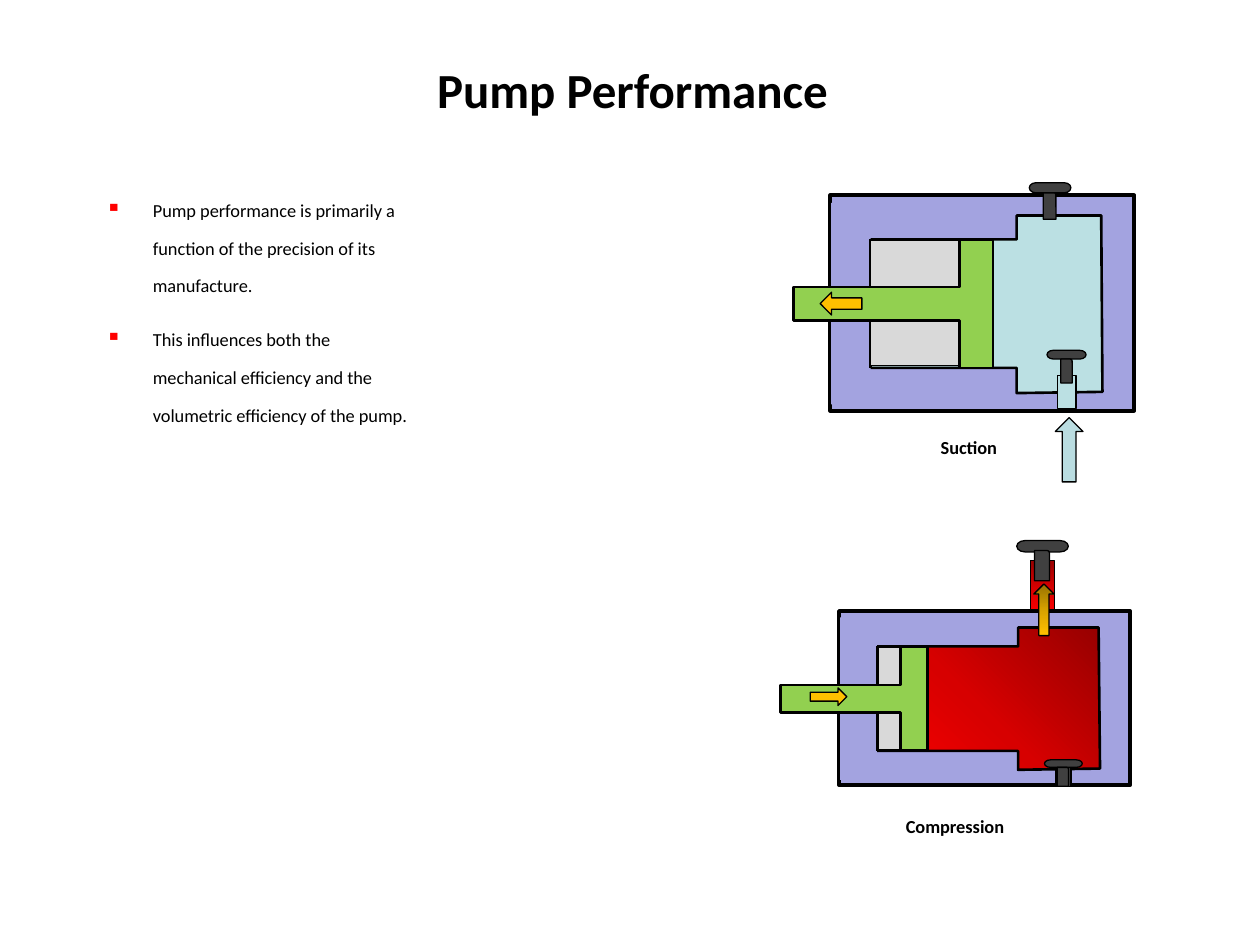
import pptx
import pptx.util
import pptx.dml.color
import pptx.enum.shapes
import pptx.enum.text
import pptx.oxml
import pptx.oxml.ns
import lxml.etree
from dataclasses import dataclass

Pt = pptx.util.Pt
SHAPES = pptx.enum.shapes.MSO_SHAPE
TEXT = pptx.enum.text


@dataclass(frozen=True)
class Theme:
    font: str = "Calibri"
    title_size: float = 28
    body_size: float = 10.5
    body_pitch: float = 21.5
    body_gap: float = 9.4
    ink: str = "000000"
    bullet: str = "FF0000"
    housing: str = "A3A3E0"
    fluid: str = "BBE0E3"
    inflow: str = "BADDE1"
    space: str = "D9D9D9"
    piston: str = "92D050"
    valve: str = "404040"
    motion: str = "FFC000"
    pressure: tuple = ("970000", "D70000", "FF0000")
    outflow: tuple = ("977200", "D7A200", "FFC000")
    thin: float = 0.75
    medium: float = 1.5
    thick: float = 2.25


THEME = Theme()

TITLE = ("Pump Performance", (37.4, 15.1, 648, 72))
BODY_BOX = (53.3, 105, 190.1, 257.8)
BODY = [
    "Pump performance is primarily a function of the precision of its manufacture.",
    "This influences both the mechanical efficiency and the volumetric efficiency of the pump.",
]


def part(kind, box, fill, line=THEME.thin, rotation=0, angle=0):
    return dict(kind=kind, box=box, fill=fill, line=line, rotation=rotation, angle=angle)


def valve(cap, stem):
    return [part(SHAPES.FLOWCHART_TERMINATOR, cap, THEME.valve),
            part(SHAPES.ROUND_1_RECTANGLE, stem, THEME.valve)]


def chamber(points, fill, angle=0):
    return part("outline", points, fill, THEME.medium, angle=angle)


def wall(x, top, bottom, width):
    return part("line", (x, top, x, bottom), None, width)


SUCTION = [
    part(SHAPES.RECTANGLE, (474.5, 111.6, 173.5, 123.1), THEME.housing, THEME.thick),
    chamber([(581, 136.8), (581, 123.1), (629.3, 123.1), (630, 223.9), (581, 224.6),
             (581, 210.2), (474.5, 210.2), (474.5, 136.8)], THEME.fluid),
    part(SHAPES.RECTANGLE, (474.5, 115.9, 23, 115.2), THEME.housing, None),
    wall(474.5, 112.3, 234.7, THEME.thin),
    wall(497.5, 136.8, 210.2, THEME.medium),
    part(SHAPES.RIGHT_ARROW, (592.6, 249.1, 36.7, 15.8), THEME.inflow, rotation=270),
    part(SHAPES.RECTANGLE, (497.5, 137.5, 58.3, 71.3), THEME.space),
    part(SHAPES.LEFT_RIGHT_UP_ARROW, (473.8, 116.6, 73.4, 113.8), THEME.piston,
         THEME.medium, 270),
    *valve((588.2, 104.4, 23.8, 5.8), (596.2, 110.2, 7.2, 15.1)),
    part(SHAPES.RECTANGLE, (604.1, 214.6, 10.8, 18.7), THEME.fluid),
    *valve((598.3, 200.2, 22.3, 5), (606.2, 205.2, 6.5, 13.7)),
    part(SHAPES.LEFT_ARROW, (468.7, 167, 23.8, 13), THEME.motion),
]
COMPRESSION = [
    part(SHAPES.RECTANGLE, (589, 320.4, 13.7, 31.7), THEME.pressure, angle=90),
    *valve((581, 308.9, 29.5, 6.5), (591.1, 314.6, 8.6, 17.3)),
    part(SHAPES.RECTANGLE, (479.5, 349.2, 166.3, 99.4), THEME.housing, THEME.thick),
    chamber([(581.8, 369.4), (581.8, 358.6), (627.8, 358.6), (628.6, 439.2), (581.8, 439.9),
             (581.8, 429.1), (479.5, 429.1), (479.5, 369.4)], THEME.pressure, 135),
    part(SHAPES.RECTANGLE, (603.4, 438.5, 8.6, 10.8), THEME.valve),
    *valve((596.9, 434.2, 21.6, 4.3), (604.1, 438.5, 6.5, 10.8)),
    part(SHAPES.RECTANGLE, (479.5, 352.8, 21.6, 92.9), THEME.housing, None),
    wall(479.5, 349.9, 448.6, THEME.thin),
    wall(501.1, 369.4, 429.1, THEME.medium),
    part(SHAPES.RIGHT_ARROW, (581.8, 342.7, 29.5, 11.5), THEME.outflow, rotation=270, angle=180),
    part(SHAPES.RECTANGLE, (501.8, 370.1, 14.4, 58.3), THEME.space),
    part(SHAPES.LEFT_RIGHT_UP_ARROW, (458.6, 357.1, 59, 84.2), THEME.piston,
         THEME.medium, 270),
    part(SHAPES.RIGHT_ARROW, (463, 393.1, 20.9, 10.1), THEME.motion),
]
PUMPS = [
    ("Suction", (526.3, 244.8, 54.7, 20.9), SUCTION),
    ("Compression", (511.9, 460.8, 67.7, 23), COMPRESSION),
]
PISTON_ADJUSTMENTS = (0.263, 0.131, 0)


def points(values):
    return [Pt(value) for value in values]


def color(value):
    return pptx.dml.color.RGBColor.from_string(value)


def child(parent, tag, **attributes):
    return lxml.etree.SubElement(parent, pptx.oxml.ns.qn(tag), attributes)


def fill_gradient(shape, colors, angle):
    shape.fill.gradient()
    gradient = shape.element.spPr.find(pptx.oxml.ns.qn("a:gradFill"))
    for old in list(gradient):
        gradient.remove(old)
    stops = child(gradient, "a:gsLst")
    for index, value in enumerate(colors):
        child(child(stops, "a:gs", pos=str(index * 50000)), "a:srgbClr", val=value)
    child(gradient, "a:lin", ang=str(angle * 60000), scaled="0")


def draw_part(shapes, kind, box, fill, line, rotation, angle):
    if kind == "line":
        shape = shapes.add_connector(pptx.enum.shapes.MSO_CONNECTOR.STRAIGHT, *points(box))
        child(shape.element.spPr, "a:effectLst")
    elif kind == "outline":
        corners = [points(corner) for corner in box]
        builder = shapes.build_freeform(*corners[0])
        builder.add_line_segments(corners[1:], close=True)
        shape = builder.convert_to_shape()
    else:
        shape = shapes.add_shape(kind, *points(box))
        shape.rotation = rotation
        if kind == SHAPES.LEFT_RIGHT_UP_ARROW:
            for index, value in enumerate(PISTON_ADJUSTMENTS):
                shape.adjustments[index] = value
    if line is None:
        shape.line.fill.background()
    else:
        shape.line.color.rgb = color(THEME.ink)
        shape.line.width = Pt(line)
    if kind != "line":
        shape.shadow.inherit = False
        if isinstance(fill, tuple):
            fill_gradient(shape, fill, angle)
        else:
            shape.fill.solid()
            shape.fill.fore_color.rgb = color(fill)


def style(paragraph, size, bold=False):
    paragraph.font.name = THEME.font
    paragraph.font.size = Pt(size)
    paragraph.font.bold = bold
    paragraph.font.color.rgb = color(THEME.ink)


def draw_heading(shapes, text, box, size, wrap):
    frame = shapes.add_textbox(*points(box)).text_frame
    frame.word_wrap = wrap
    frame.vertical_anchor = TEXT.MSO_ANCHOR.MIDDLE
    frame.margin_left = frame.margin_right = frame.margin_top = frame.margin_bottom = 0
    paragraph = frame.paragraphs[0]
    paragraph.text = text
    paragraph.alignment = TEXT.PP_ALIGN.CENTER
    style(paragraph, size, True)


def draw_body(shapes):
    frame = shapes.add_textbox(*points(BODY_BOX)).text_frame
    frame.word_wrap = True
    frame.margin_top = 0
    for index, text in enumerate(BODY):
        paragraph = frame.paragraphs[0] if index == 0 else frame.add_paragraph()
        paragraph.text = text
        paragraph.line_spacing = Pt(THEME.body_pitch)
        paragraph.space_after = Pt(THEME.body_gap)
        style(paragraph, THEME.body_size)
        properties = paragraph._p.get_or_add_pPr()
        properties.set("marL", str(Pt(27)))
        properties.set("indent", str(Pt(-27)))
        bullet = [pptx.oxml.parse_xml(f'<a:{tag} {pptx.oxml.ns.nsdecls("a")}{rest}')
                  for tag, rest in (
                      ("buClr", f'><a:srgbClr val="{THEME.bullet}"/></a:buClr>'),
                      ("buSzPct", ' val="120000"/>'),
                      ("buChar", ' char="▪"/>'))]
        position = list(properties).index(properties.find(pptx.oxml.ns.qn("a:defRPr")))
        properties[position:position] = bullet


def main():
    presentation = pptx.Presentation()
    presentation.slide_width, presentation.slide_height = points((720, 540))
    slide = presentation.slides.add_slide(presentation.slide_layouts[6])
    draw_heading(slide.shapes, *TITLE, THEME.title_size, True)
    draw_body(slide.shapes)
    for label, label_box, parts in PUMPS:
        group = slide.shapes.add_group_shape()
        for item in parts:
            draw_part(group.shapes, **item)
        draw_heading(group.shapes, label, label_box, THEME.body_size, False)
    presentation.save("out.pptx")


if __name__ == "__main__":
    main()
